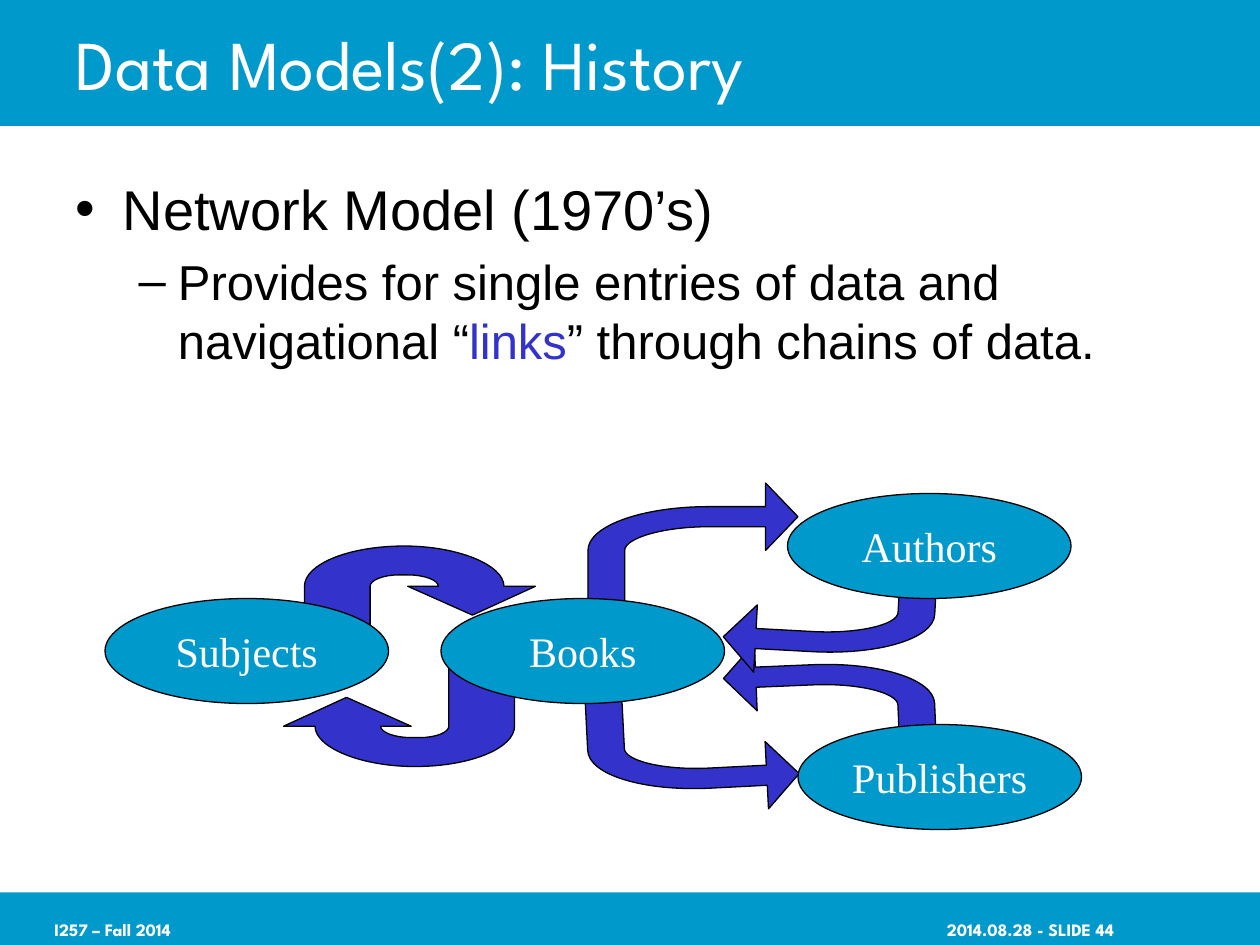
from dataclasses import dataclass
from math import cos, radians, sin

from pptx import Presentation
from pptx.dml.color import RGBColor
from pptx.enum.shapes import MSO_SHAPE
from pptx.enum.text import MSO_ANCHOR, MSO_AUTO_SIZE, PP_ALIGN
from pptx.oxml.ns import qn
from pptx.oxml.xmlchemy import OxmlElement
from pptx.util import Pt

RECTANGLE, OVAL = MSO_SHAPE.RECTANGLE, MSO_SHAPE.OVAL
LEFT, CENTER, RIGHT = PP_ALIGN.LEFT, PP_ALIGN.CENTER, PP_ALIGN.RIGHT
MIDDLE = MSO_ANCHOR.MIDDLE
NO_AUTOFIT = MSO_AUTO_SIZE.NONE


@dataclass(frozen=True)
class Theme:
    band: RGBColor = RGBColor(0x00, 0x99, 0xCC)
    accent: RGBColor = RGBColor(0x33, 0x33, 0xCC)
    ink: RGBColor = RGBColor(0, 0, 0)
    paper: RGBColor = RGBColor(0xFF, 0xFF, 0xFF)
    heading_font: str = "League Spartan"
    body_font: str = "Arial"
    label_font: str = "Times New Roman"
    title_size: int = 40
    body_sizes: tuple = (32, 28)
    label_size: int = 24
    footer_size: int = 10
    outline: float = 0.75


# Outlines in points: one pair is a corner, three pairs are a Bézier curve.
U_TURN_SIZE = (132, 60)
U_TURN = [
    [(96, 39.5)], [(132, 23)], [(114, 23)],
    [(114, 11), (88, 0), (57, 0)],
    [(25, 0), (0, 10.5), (0, 23)],
    [(0, 60)], [(37.5, 60)], [(37.5, 23)],
    [(37.5, 19.5), (45, 16.5), (54, 16.5)],
    [(59, 16.5)],
    [(68.5, 16.5), (76.5, 19.5), (76.5, 23)],
    [(59, 23)],
]
BEND_SIZE = (120, 68.4)
BEND = [
    [(120, 19.25)], [(101.5, 0)], [(101.5, 13.5)], [(69, 13.5)],
    [(31, 13.5), (0, 24.5), (0, 38.5)],
    [(0, 68.4)], [(21, 68.4)], [(21, 38.5)],
    [(21, 31.5), (43, 25), (69, 25)],
    [(101.5, 25)], [(101.5, 38.5)],
]


def bend_curves(shape, outline):
    """Join each three segments that hold a curve's control points into that curve."""
    segments = iter(list(shape.element.iter(qn("a:lnTo"))))
    for part in outline[1:]:
        group = [next(segments) for _ in part]
        if len(group) == 1:
            continue
        curve = OxmlElement("a:cubicBezTo")
        group[0].addprevious(curve)
        for segment in group:
            curve.append(segment[0])
            segment.getparent().remove(segment)


def write(paragraph, text, *, font, size, color, bold=False, align=LEFT):
    paragraph.alignment = align
    run = paragraph.add_run()
    run.text = text
    run.font.name, run.font.size, run.font.bold = font, Pt(size), bold
    run.font.color.rgb = color


class SlideBuilder:
    def __init__(self, slide, theme):
        self.slide, self.theme = slide, theme

    def place(self, placeholder, left, top, width, height):
        """Move a placeholder and bring it in front of what is drawn so far."""
        placeholder.left, placeholder.top = Pt(left), Pt(top)
        placeholder.width, placeholder.height = Pt(width), Pt(height)
        placeholder.element.getparent().append(placeholder.element)
        placeholder.text_frame.auto_size = NO_AUTOFIT
        return placeholder.text_frame

    def paint(self, shape, fill, outlined=True):
        shape.shadow.inherit = False
        shape.fill.solid()
        shape.fill.fore_color.rgb = fill
        if outlined:
            shape.line.color.rgb = self.theme.ink
            shape.line.width = Pt(self.theme.outline)
        else:
            shape.line.fill.background()

    def band(self, top, height):
        band = self.slide.shapes.add_shape(RECTANGLE, 0, Pt(top), Pt(720), Pt(height))
        self.paint(band, self.theme.band, outlined=False)

    def title(self, text):
        frame = self.place(self.slide.shapes.title, 36, 0, 612, 72)
        frame.vertical_anchor = MIDDLE
        write(frame.paragraphs[0], text, font=self.theme.heading_font,
              size=self.theme.title_size, color=self.theme.paper)

    def bullets(self, items):
        """Write (level, runs) items, where each run is text and its colour."""
        frame = self.place(self.slide.placeholders[1], 36, 96, 648, 390)
        for index, (level, runs) in enumerate(items):
            paragraph = frame.add_paragraph() if index else frame.paragraphs[0]
            paragraph.level = level
            paragraph.space_before = Pt(5.6 if index else 0)
            for text, color in runs:
                write(paragraph, text, font=self.theme.body_font,
                      size=self.theme.body_sizes[level], color=color)

    def footer(self, text, left, align):
        box = self.slide.shapes.add_textbox(Pt(left), Pt(519.5), Pt(150), Pt(23))
        frame = box.text_frame
        frame.word_wrap = True
        frame.vertical_anchor = MIDDLE
        frame.margin_right = 0
        write(frame.paragraphs[0], text, font=self.theme.heading_font, bold=True,
              size=self.theme.footer_size, color=self.theme.paper, align=align)

    def entity(self, text, left, top):
        oval = self.slide.shapes.add_shape(OVAL, Pt(left), Pt(top), Pt(162), Pt(60))
        self.paint(oval, self.theme.band)
        frame = oval.text_frame
        frame.word_wrap = False
        frame.vertical_anchor = MIDDLE
        write(frame.paragraphs[0], text, font=self.theme.label_font,
              size=self.theme.label_size, color=self.theme.paper, align=CENTER)

    def link(self, outline, size, left, top, flip=(1, 1), turn=0):
        """Draw an arrow, mirrored by flip, then turned clockwise about its centre."""
        half_width, half_height = size[0] / 2, size[1] / 2
        cosine, sine = cos(radians(turn)), sin(radians(turn))
        points = []
        for x, y in (point for part in outline for point in part):
            dx, dy = (x - half_width) * flip[0], (y - half_height) * flip[1]
            points.append((Pt(left + half_width + dx * cosine - dy * sine),
                           Pt(top + half_height + dx * sine + dy * cosine)))
        builder = self.slide.shapes.build_freeform(*points[0])
        builder.add_line_segments(points[1:], close=True)
        arrow = builder.convert_to_shape()
        bend_curves(arrow, outline)
        self.paint(arrow, self.theme.accent)


def main():
    deck = Presentation()
    deck.slide_width, deck.slide_height = Pt(720), Pt(540)
    theme = Theme()
    page = SlideBuilder(deck.slides.add_slide(deck.slide_layouts[1]), theme)

    page.band(0, 72)
    page.band(510, 30)
    page.footer("2014.08.28 - SLIDE 44", 486.5, RIGHT)
    page.footer("I257 – Fall 2014", 24, LEFT)
    page.title("Data Models(2): History")
    page.bullets([
        (0, [("Network Model (1970’s)", theme.ink)]),
        (1, [("Provides for single entries of data and navigational “", theme.ink),
             ("links", theme.accent),
             ("” through chains of data.", theme.ink)]),
    ])

    page.link(U_TURN, U_TURN_SIZE, 174, 312)
    page.link(U_TURN, U_TURN_SIZE, 162, 378, flip=(-1, -1))
    page.entity("Subjects", 60, 342)
    page.link(BEND, BEND_SIZE, 336, 276)
    page.link(BEND, BEND_SIZE, 414, 366, flip=(-1, 1), turn=-2.4)
    page.link(BEND, BEND_SIZE, 336, 396, flip=(1, -1), turn=-2.9)
    page.link(BEND, BEND_SIZE, 414, 318, flip=(-1, -1), turn=3.1)
    page.entity("Books", 252, 342)
    page.entity("Authors", 450, 282)
    page.entity("Publishers", 456, 414)

    deck.save("out.pptx")


if __name__ == "__main__":
    main()
